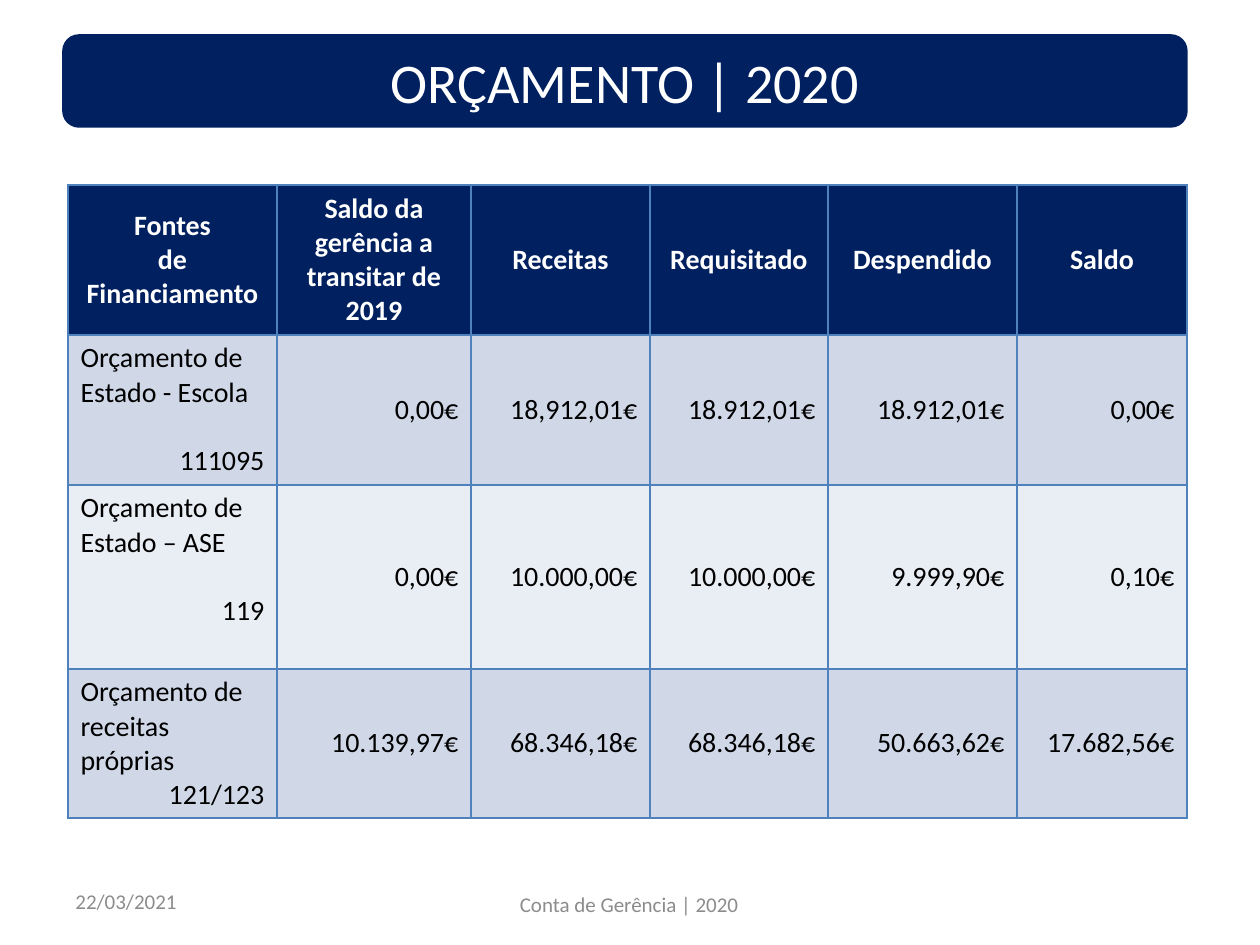
import pptx
import pptx.util
from pptx.dml.color import RGBColor
from pptx.enum.shapes import MSO_SHAPE
from pptx.enum.text import MSO_ANCHOR, PP_ALIGN
from pptx.oxml import parse_xml
from pptx.oxml.ns import nsdecls

PX = 914400 / 126
FONT = "Calibri"
NAVY = RGBColor(0x00, 0x20, 0x60)
BLUE = RGBColor(0x4F, 0x81, 0xBD)
BAND = RGBColor(0xD0, 0xD8, 0xE8)
PALE = RGBColor(0xE9, 0xED, 0xF4)
GREY = RGBColor(0x8C, 0x8C, 0x8C)
WHITE = RGBColor(0xFF, 0xFF, 0xFF)
BLACK = RGBColor(0x00, 0x00, 0x00)
LEFT, MID, RIGHT = PP_ALIGN.LEFT, PP_ALIGN.CENTER, PP_ALIGN.RIGHT

COLS = [209, 194, 179, 178, 189, 170]
ROWS = [150, 150, 184, 149]
HEADS = ["Fontes\nde Financiamento", "Saldo da gerência a transitar de 2019",
         "Receitas", "Requisitado", "Despendido", "Saldo"]
# Source of funds, its code, the gap in points above the code, amounts
FUNDS = [
    ("Orçamento de Estado - Escola", "111095", 19.5,
     ["0,00€", "18,912,01€", "18.912,01€", "18.912,01€", "0,00€"]),
    ("Orçamento de Estado – ASE", "119", 19.5,
     ["0,00€", "10.000,00€", "10.000,00€", "9.999,90€", "0,10€"]),
    ("Orçamento de receitas próprias", "121/123", 0,
     ["10.139,97€", "68.346,18€", "68.346,18€", "50.663,62€", "17.682,56€"]),
]


def emu(*sizes):
    return [round(size * PX) for size in sizes]


def write(frame, text, size=16, color=BLACK, bold=False, align=LEFT,
          gap=0, more=False):
    """Write one paragraph per line; more=True adds below existing text."""
    frame.word_wrap = True
    for num, line in enumerate(text.split("\n")):
        para = frame.add_paragraph() if more or num else frame.paragraphs[0]
        para.alignment = align
        para.space_before = pptx.util.Pt(gap)
        run = para.add_run()
        run.text = line
        run.font.name = FONT
        run.font.size = pptx.util.Pt(size)
        run.font.bold = bold
        run.font.color.rgb = color


def edge(cell):
    """Draw a thin blue border on all four sides, ahead of the fill."""
    props = cell._tc.get_or_add_tcPr()
    for num, side in enumerate(("lnL", "lnR", "lnT", "lnB")):
        props.insert(num, parse_xml(
            f'<a:{side} {nsdecls("a")} w="12700"><a:solidFill>'
            f'<a:srgbClr val="{BLUE}"/></a:solidFill></a:{side}>'))


def paint(cell, color, anchor=MSO_ANCHOR.MIDDLE):
    cell.fill.solid()
    cell.fill.fore_color.rgb = color
    cell.vertical_anchor = anchor
    edge(cell)
    return cell.text_frame


def banner(slide, box):
    shape = slide.shapes.add_shape(MSO_SHAPE.ROUNDED_RECTANGLE, *emu(*box))
    shape.shadow.inherit = False
    shape.fill.solid()
    shape.fill.fore_color.rgb = NAVY
    shape.line.color.rgb = NAVY
    shape.line.width = pptx.util.Pt(2)
    shape.text_frame.vertical_anchor = MSO_ANCHOR.MIDDLE
    write(shape.text_frame, "ORÇAMENTO | 2020", size=32, color=WHITE, align=MID)


def budget(slide, left, top):
    box = emu(left, top, sum(COLS), sum(ROWS))
    table = slide.shapes.add_table(len(ROWS), len(COLS), *box).table
    for col, width in zip(table.columns, emu(*COLS)):
        col.width = width
    for row, height in zip(table.rows, emu(*ROWS)):
        row.height = height
    for col, head in enumerate(HEADS):
        write(paint(table.cell(0, col), NAVY), head,
              color=WHITE, bold=True, align=MID)
    for row, (name, code, gap, sums) in enumerate(FUNDS, 1):
        fill = BAND if row % 2 else PALE
        frame = paint(table.cell(row, 0), fill, MSO_ANCHOR.TOP)
        write(frame, name)
        write(frame, code, align=RIGHT, gap=gap, more=True)
        for col, value in enumerate(sums, 1):
            write(paint(table.cell(row, col), fill), value, align=RIGHT)


def footer(slide, box, text, align):
    frame = slide.shapes.add_textbox(*emu(*box)).text_frame
    frame.vertical_anchor = MSO_ANCHOR.MIDDLE
    write(frame, text, size=12, color=GREY, align=align)


def main():
    deck = pptx.Presentation()
    deck.slide_width, deck.slide_height = emu(1260, 945)
    slide = deck.slides.add_slide(deck.slide_layouts[6])
    footer(slide, (63, 876, 294, 50), "22/03/2021", LEFT)
    footer(slide, (432, 879, 399, 50), "Conta de Gerência | 2020 ", MID)
    budget(slide, 68, 185)
    banner(slide, (64, 36, 1122, 90))
    deck.save("out.pptx")


if __name__ == "__main__":
    main()
